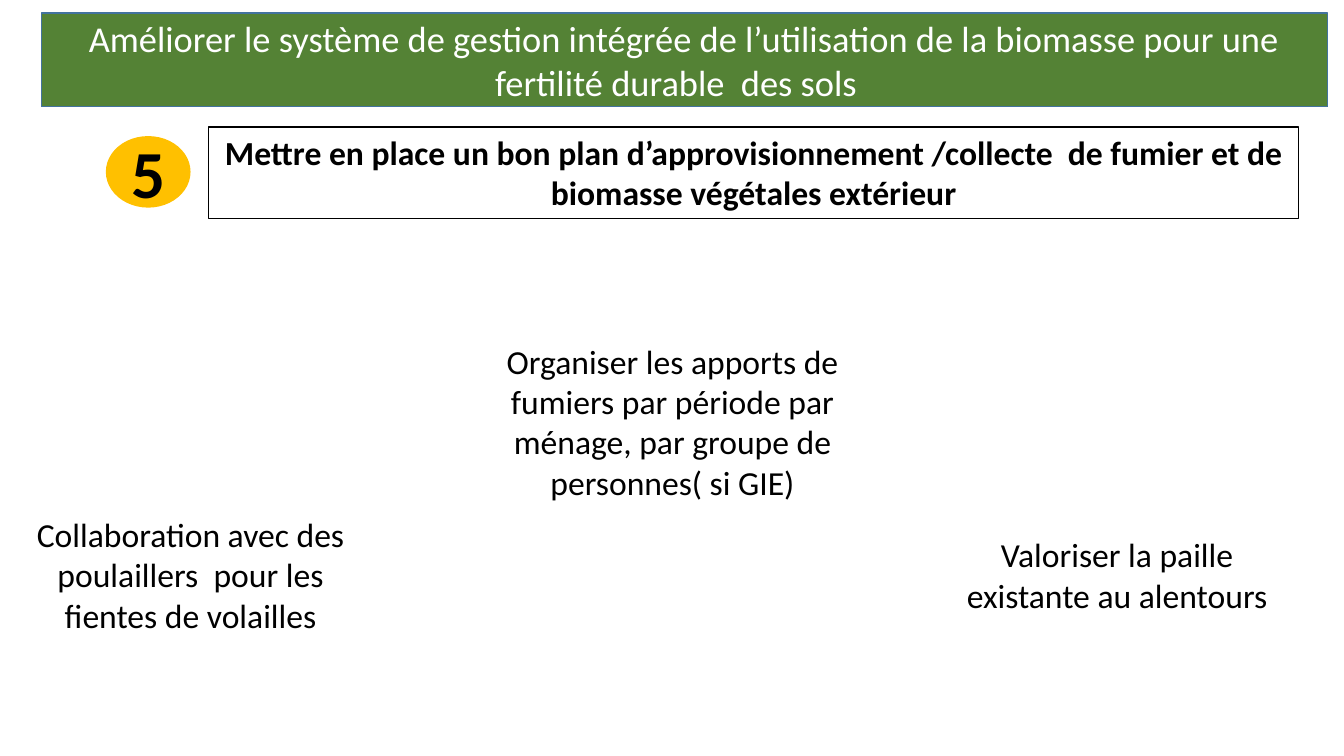
from dataclasses import dataclass

from pptx import Presentation
from pptx.dml.color import RGBColor
from pptx.enum.shapes import MSO_SHAPE as Kind
from pptx.enum.text import MSO_ANCHOR as Anchor, MSO_AUTO_SIZE as Fit, PP_ALIGN as Align
from pptx.shapes.autoshape import Shape
from pptx.slide import Slide
from pptx.util import Inches, Pt

GREEN = RGBColor(0x54, 0x82, 0x35)
BLUE = RGBColor(0x43, 0x73, 0x9E)
AMBER = RGBColor(0xFF, 0xC0, 0x00)
BLACK = RGBColor(0x00, 0x00, 0x00)
WHITE = RGBColor(0xFF, 0xFF, 0xFF)
FONT = "Calibri"
NOTE_W = 3.6


@dataclass
class Note:
    text: str
    left: float
    top: float
    height: float


NOTES = [
    Note("Collaboration avec des poulaillers  pour les fientes de volailles", 0.09, 5.05, 1.31),
    Note("Organiser les apports de fumiers par période par ménage, "
         "par groupe de personnes( si GIE)", 4.87, 3.33, 1.72),
    Note("Valoriser la paille existante au alentours", 9.28, 5.25, 0.91),
]


def write(shape: Shape, text: str, size: float, color: RGBColor = BLACK,
          bold: bool = False, anchor: Anchor = Anchor.TOP, fit: Fit = Fit.NONE) -> None:
    frame = shape.text_frame
    frame.text = text
    frame.word_wrap = True
    frame.auto_size = fit
    frame.vertical_anchor = anchor
    par = frame.paragraphs[0]
    par.alignment = Align.CENTER
    par.line_spacing = 1.0
    par.space_before = Pt(0)
    font = par.font
    font.name, font.size, font.bold = FONT, Pt(size), bold
    font.color.rgb = color


def add_title(slide: Slide) -> None:
    title = slide.shapes.title
    title.left, title.top = Inches(0.41), Inches(0.13)
    title.width, title.height = Inches(12.76), Inches(0.93)
    title.fill.solid()
    title.fill.fore_color.rgb = GREEN
    title.line.color.rgb = BLUE
    title.line.width = Pt(1)
    write(title, "Améliorer le système de gestion intégrée de l’utilisation de la "
          "biomasse pour une fertilité durable  des sols  ", 26, WHITE, anchor=Anchor.MIDDLE)


def add_step(slide: Slide) -> None:
    # Framed heading
    frame = slide.shapes.add_shape(
        Kind.RECTANGLE, Inches(2.07), Inches(1.26), Inches(10.81), Inches(0.91))
    frame.shadow.inherit = False
    frame.fill.background()
    frame.line.color.rgb = BLACK
    frame.line.width = Pt(0.75)
    write(frame, "Mettre en place un bon plan d’approvisionnement /collecte  de fumier "
          "et de biomasse végétales extérieur", 24, bold=True, fit=Fit.SHAPE_TO_FIT_TEXT)

    # Number badge
    badge = slide.shapes.add_shape(
        Kind.OVAL, Inches(1.05), Inches(1.35), Inches(0.84), Inches(0.71))
    badge.shadow.inherit = False
    badge.fill.solid()
    badge.fill.fore_color.rgb = AMBER
    badge.line.fill.background()
    write(badge, "5", 48, bold=True, anchor=Anchor.MIDDLE)


def add_note(slide: Slide, note: Note) -> None:
    box = slide.shapes.add_textbox(
        Inches(note.left), Inches(note.top), Inches(NOTE_W), Inches(note.height))
    write(box, note.text, 24, fit=Fit.SHAPE_TO_FIT_TEXT)


def main() -> None:
    deck = Presentation()
    deck.slide_width, deck.slide_height = Inches(13.33), Inches(7.5)
    slide = deck.slides.add_slide(deck.slide_layouts.get_by_name("Title Only"))
    add_title(slide)
    add_step(slide)
    for note in NOTES:
        add_note(slide, note)
    deck.save("out.pptx")


if __name__ == "__main__":
    main()
